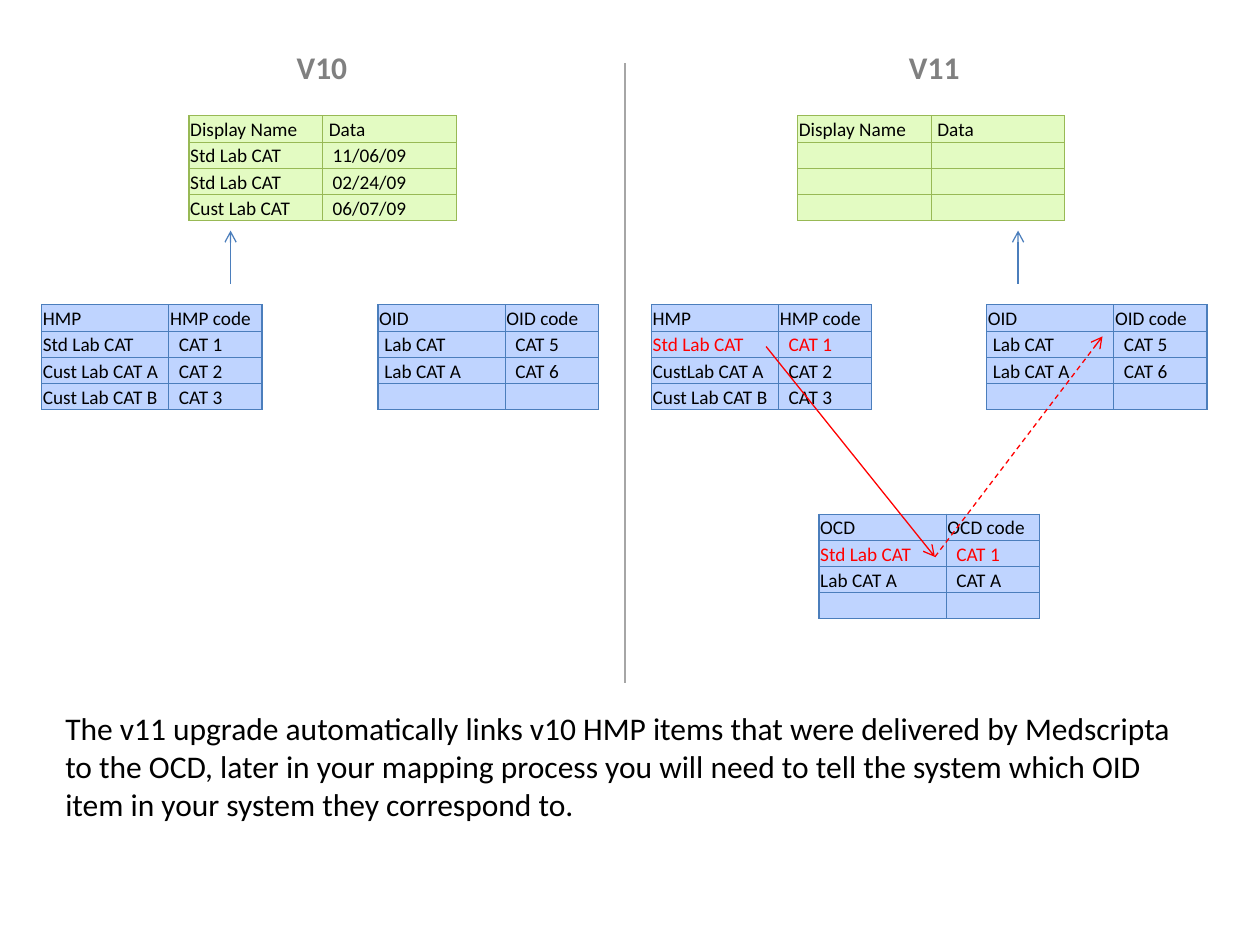
from dataclasses import dataclass

from lxml.etree import SubElement
from pptx import Presentation
from pptx.dml.color import RGBColor
from pptx.enum.dml import MSO_LINE
from pptx.enum.shapes import MSO_CONNECTOR
from pptx.enum.text import MSO_ANCHOR, PP_ALIGN
from pptx.oxml import parse_xml
from pptx.oxml.ns import nsdecls, qn
from pptx.slide import Slide
from pptx.util import Inches, Pt

FONT = "Calibri"
BLACK = RGBColor(0x00, 0x00, 0x00)
RED = RGBColor(0xFF, 0x00, 0x00)
HEADING_GRAY = RGBColor(0x80, 0x80, 0x80)
DIVIDER_GRAY = RGBColor(0xA6, 0xA6, 0xA6)
BLUE_LINE = RGBColor(0x4B, 0x7E, 0xBC)
BLUE_FILL = RGBColor(0xBF, 0xD4, 0xFF)
GREEN_LINE = RGBColor(0x98, 0xB9, 0x55)
GREEN_FILL = RGBColor(0xE3, 0xFB, 0xC2)

TABLE_HEIGHT = 0.83
ROW_COUNT = 4
CELL_MARGIN = 0.01
LINE_WIDTH = Pt(0.75)


@dataclass(frozen=True)
class TableStyle:
    column_widths: tuple[float, float]
    fill: RGBColor
    border: RGBColor
    header_indents: tuple[float, float]


@dataclass(frozen=True)
class DataTable:
    left: float
    top: float
    style: TableStyle
    rows: list[tuple[str, str]]
    body_indents: tuple[float, float] = (0, 0.07)
    red_row: int | None = None


@dataclass(frozen=True)
class Line:
    start: tuple[float, float]
    end: tuple[float, float]
    color: RGBColor
    arrow: bool = True
    dashed: bool = False


CODE_STYLE = TableStyle((1.01, 0.74), BLUE_FILL, BLUE_LINE, (0, 0))
DISPLAY_STYLE = TableStyle((1.06, 1.06), GREEN_FILL, GREEN_LINE, (0, 0.04))

DISPLAY_HEADER = ("Display Name", "Data")
HMP_HEADER = ("HMP", "HMP code")
DELIVERED_ITEM = ("Std Lab CAT", "CAT 1")
OID_ROWS = [("OID", "OID code"), ("Lab CAT", "CAT 5"), ("Lab CAT A", "CAT 6")]
OID_INDENTS = (0.04, 0.07)

TABLES = [
    # V10 side
    DataTable(1.5, 0.92, DISPLAY_STYLE, [
        DISPLAY_HEADER, ("Std Lab CAT", "11/06/09"),
        ("Std Lab CAT", "02/24/09"), ("Cust Lab CAT", "06/07/09")]),
    DataTable(0.33, 2.42, CODE_STYLE, [
        HMP_HEADER, DELIVERED_ITEM,
        ("Cust Lab CAT A", "CAT 2"), ("Cust Lab CAT B", "CAT 3")]),
    DataTable(3, 2.42, CODE_STYLE, OID_ROWS, OID_INDENTS),
    # V11 side
    DataTable(6.33, 0.92, DISPLAY_STYLE, [DISPLAY_HEADER]),
    DataTable(5.17, 2.42, CODE_STYLE, [
        HMP_HEADER, DELIVERED_ITEM,
        ("CustLab CAT A", "CAT 2"), ("Cust Lab CAT B", "CAT 3")], red_row=1),
    DataTable(7.83, 2.42, CODE_STYLE, OID_ROWS, OID_INDENTS),
    DataTable(6.5, 4.08, CODE_STYLE, [
        ("OCD", "OCD code"), DELIVERED_ITEM, ("Lab CAT A", "CAT A")], red_row=1),
]

LINES = [
    Line((4.96, 0.5), (4.96, 5.42), DIVIDER_GRAY, arrow=False),
    Line((1.83, 2.25), (1.83, 1.83), BLUE_LINE),
    Line((8.08, 2.25), (8.08, 1.83), BLUE_LINE),
    Line((6.08, 2.75), (7.42, 4.42), RED),
    Line((7.42, 4.42), (8.75, 2.67), RED, dashed=True),
]

EXPLANATION = (
    "The v11 upgrade automatically links v10 HMP items that were delivered by "
    "Medscripta to the OCD, later in your mapping process you will need to tell "
    "the system which OID item in your system they correspond to."
)


def format_paragraph(paragraph, size: int, color: RGBColor, bold: bool = False) -> None:
    paragraph.font.name = FONT
    paragraph.font.size = Pt(size)
    paragraph.font.bold = bold
    paragraph.font.color.rgb = color


def add_text(slide: Slide, text: str, left: float, top: float, width: float,
             height: float, color: RGBColor, heading: bool = False) -> None:
    box = slide.shapes.add_textbox(
        Inches(left), Inches(top), Inches(width), Inches(height))
    box.text_frame.word_wrap = True
    paragraph = box.text_frame.paragraphs[0]
    paragraph.text = text
    paragraph.alignment = PP_ALIGN.CENTER if heading else PP_ALIGN.LEFT
    format_paragraph(paragraph, 18, color, bold=heading)


def format_cell(cell, text: str, indent: float, style: TableStyle,
                color: RGBColor) -> None:
    cell.margin_left = Inches(CELL_MARGIN + indent)
    cell.margin_right = cell.margin_top = Inches(CELL_MARGIN)
    cell.margin_bottom = 0
    cell.vertical_anchor = MSO_ANCHOR.BOTTOM
    cell.fill.solid()
    cell.fill.fore_color.rgb = style.fill

    paragraph = cell.text_frame.paragraphs[0]
    paragraph.text = text
    format_paragraph(paragraph, 11, color)
    if not text:  # keeps empty rows from growing
        SubElement(paragraph._p, qn("a:endParaRPr"), sz="1100")

    # Borders come before the fill in the cell properties
    properties = cell._tc.get_or_add_tcPr()
    for position, side in enumerate(("lnL", "lnR", "lnT", "lnB")):
        properties.insert(position, parse_xml(
            f'<a:{side} {nsdecls("a")} w="{LINE_WIDTH}"><a:solidFill>'
            f'<a:srgbClr val="{style.border}"/></a:solidFill></a:{side}>'))


def add_data_table(slide: Slide, data: DataTable) -> None:
    style = data.style
    table = slide.shapes.add_table(
        ROW_COUNT, 2, Inches(data.left), Inches(data.top),
        Inches(sum(style.column_widths)), Inches(TABLE_HEIGHT)).table
    table.first_row = table.horz_banding = False
    for column, width in zip(table.columns, style.column_widths):
        column.width = Inches(width)

    empty_rows = [("", "")] * (ROW_COUNT - len(data.rows))
    for row_index, texts in enumerate(data.rows + empty_rows):
        indents = data.body_indents if row_index else style.header_indents
        color = RED if row_index == data.red_row else BLACK
        for column_index, (text, indent) in enumerate(zip(texts, indents)):
            format_cell(table.cell(row_index, column_index), text, indent, style, color)


def add_line(slide: Slide, line: Line) -> None:
    connector = slide.shapes.add_connector(
        MSO_CONNECTOR.STRAIGHT, *(Inches(value) for value in line.start + line.end))
    connector.line.color.rgb = line.color
    connector.line.width = LINE_WIDTH
    if line.dashed:
        connector.line.dash_style = MSO_LINE.DASH
    if line.arrow:
        SubElement(connector.line._get_or_add_ln(), qn("a:tailEnd"), type="arrow")
    SubElement(connector._element.spPr, qn("a:effectLst"))


def main() -> None:
    presentation = Presentation()
    presentation.slide_width = Inches(10)
    presentation.slide_height = Inches(7.5)
    slide = presentation.slides.add_slide(presentation.slide_layouts[6])

    # Version headings
    for heading, left in (("V10", 1.72), ("V11", 6.58)):
        add_text(slide, heading, left, 0.33, 1.67, 0.42, HEADING_GRAY, heading=True)

    # Tables, with the links drawn over them
    for data in TABLES:
        add_data_table(slide, data)
    for line in LINES:
        add_line(slide, line)

    # Explanation
    add_text(slide, EXPLANATION, 0.42, 5.58, 9, 1.01, BLACK)

    presentation.save("out.pptx")


if __name__ == "__main__":
    main()
